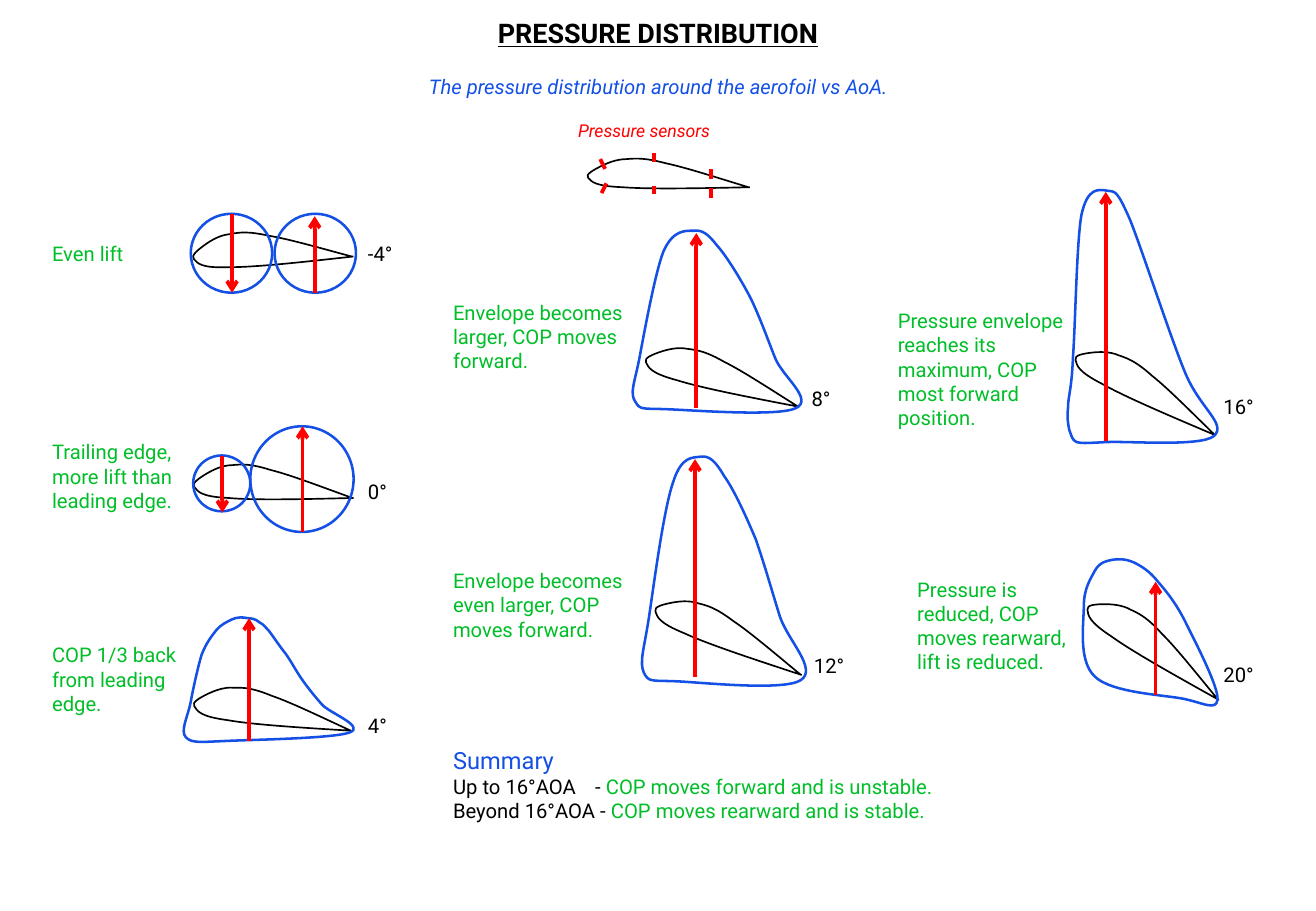
from pptx import Presentation
from pptx import util as u
from pptx.dml.color import RGBColor
from pptx.enum import shapes as kinds, text
from pptx.oxml import ns, xmlchemy as xml

BLACK = RGBColor(0x00, 0x00, 0x00)
BLUE = RGBColor(0x14, 0x50, 0xE6)
GREEN = RGBColor(0x00, 0xBE, 0x28)
RED = RGBColor(0xFF, 0x00, 0x00)

FOIL = [
    (1.32, 0.27),
    (0.92, 0.28), (0.51, 0.29), (0.29, 0.27), (0.07, 0.26), (0.04, 0.22), (0.01, 0.18),
    (-0.02, 0.15), (0.06, 0.1), (0.11, 0.07), (0.16, 0.04), (0.24, 0), (0.32, 0),
    (0.41, -0.01), (0.48, -0.01), (0.64, 0.04), (0.8, 0.08), (1.06, 0.18), (1.31, 0.27),
]
HULL4 = [
    (2.88, 6.03),
    (2.75, 6.08), (2.09, 6.09), (1.87, 6.1), (1.64, 6.11), (1.58, 6.12), (1.53, 6.07),
    (1.48, 6.02), (1.55, 5.89), (1.57, 5.78), (1.59, 5.67), (1.63, 5.49), (1.66, 5.39),
    (1.7, 5.29), (1.74, 5.24), (1.78, 5.19), (1.82, 5.14), (1.87, 5.12), (1.91, 5.1),
    (1.95, 5.08), (2, 5.08), (2.04, 5.09), (2.07, 5.09), (2.11, 5.1), (2.13, 5.12),
    (2.16, 5.13), (2.17, 5.15), (2.21, 5.19), (2.25, 5.24), (2.3, 5.32), (2.35, 5.38),
    (2.4, 5.45), (2.44, 5.53), (2.49, 5.6), (2.54, 5.67), (2.58, 5.72), (2.65, 5.8),
    (2.71, 5.87), (3.01, 5.98), (2.88, 6.03),
]
HULL8 = [
    (6.55, 3.36),
    (6.41, 3.43), (5.73, 3.38), (5.51, 3.37), (5.29, 3.36), (5.27, 3.38), (5.23, 3.31),
    (5.18, 3.24), (5.22, 3.16), (5.26, 2.96), (5.3, 2.75), (5.39, 2.25), (5.46, 2.07),
    (5.54, 1.89), (5.64, 1.9), (5.71, 1.9), (5.78, 1.89), (5.83, 1.93), (5.9, 2.02),
    (5.98, 2.11), (6.09, 2.29), (6.17, 2.44), (6.25, 2.6), (6.32, 2.8), (6.38, 2.95),
    (6.44, 3.1), (6.7, 3.29), (6.55, 3.36),
]
HULL12 = [
    (6.59, 5.6),
    (6.45, 5.69), (5.79, 5.62), (5.58, 5.61), (5.36, 5.6), (5.34, 5.62), (5.3, 5.54),
    (5.26, 5.45), (5.3, 5.35), (5.34, 5.09), (5.38, 4.83), (5.46, 4.2), (5.54, 3.97),
    (5.61, 3.75), (5.7, 3.77), (5.77, 3.76), (5.84, 3.75), (5.89, 3.8), (5.96, 3.92),
    (6.04, 4.03), (6.14, 4.25), (6.22, 4.44), (6.29, 4.64), (6.36, 4.89), (6.42, 5.08),
    (6.49, 5.28), (6.73, 5.51), (6.59, 5.6),
]
HULL16 = [
    (9.99, 3.59),
    (9.88, 3.68), (9.28, 3.63), (9.1, 3.64), (8.91, 3.65), (8.91, 3.65), (8.86, 3.64),
    (8.82, 3.62), (8.82, 3.59), (8.8, 3.54), (8.79, 3.49), (8.78, 3.45), (8.79, 3.35),
    (8.79, 3.26), (8.82, 3.21), (8.83, 2.94), (8.85, 2.68), (8.86, 1.99), (8.9, 1.77),
    (8.95, 1.54), (9.04, 1.56), (9.11, 1.57), (9.18, 1.58), (9.19, 1.56), (9.3, 1.81),
    (9.4, 2.06), (9.63, 2.77), (9.75, 3.06), (9.87, 3.36), (10.1, 3.49), (9.99, 3.59),
]
HULL20 = [
    (10.02, 5.76),
    (10.01, 5.86), (9.89, 5.78), (9.72, 5.75), (9.55, 5.72), (9.14, 5.7), (9.01, 5.57),
    (8.87, 5.44), (8.92, 5.13), (8.92, 4.99), (8.92, 4.84), (8.98, 4.76), (9.01, 4.7),
    (9.05, 4.63), (9.1, 4.62), (9.15, 4.61), (9.2, 4.6), (9.26, 4.6), (9.33, 4.63),
    (9.39, 4.66), (9.46, 4.7), (9.53, 4.79), (9.6, 4.87), (9.69, 4.98), (9.77, 5.15),
    (9.85, 5.31), (10.03, 5.66), (10.02, 5.76),
]


def curve(pool, dots, color, width, close=False):
    dots = [(u.Inches(x), u.Inches(y)) for x, y in dots]
    pen = pool.build_freeform(*dots[0])
    pen.add_line_segments(dots[1:], close=close)
    shape = pen.convert_to_shape()
    trace = shape.element.find(".//" + ns.qn("a:path"))
    legs = trace.findall(ns.qn("a:lnTo"))
    for i in range(0, len(dots) - 1, 3):
        bend = xml.OxmlElement("a:cubicBezTo")
        legs[i].addprevious(bend)
        for leg in legs[i:i + 3]:
            bend.append(leg[0])
            trace.remove(leg)
    shape.fill.background()
    shape.shadow.inherit = False
    shape.line.color.rgb = color
    shape.line.width = u.Pt(width)
    return shape


def stroke(pool, ends, arrow=False):
    line = pool.add_connector(kinds.MSO_CONNECTOR.STRAIGHT, *map(u.Inches, ends))
    line.line.color.rgb = RED
    line.line.width = u.Pt(2.25)
    if arrow:
        tip = xml.OxmlElement("a:tailEnd")
        tip.set("type", "arrow")
        line.line._get_or_add_ln().append(tip)
    line.element.spPr.append(xml.OxmlElement("a:effectLst"))


deck = Presentation()
deck.slide_width, deck.slide_height = u.Inches(10.83), u.Inches(7.5)
slide = deck.slides.add_slide(deck.slide_layouts[5])
pool = slide.shapes

curve(pool, [(4.83 + x * 1.34 / 1.32, 1.31 + y * 0.24 / 0.28) for x, y in FOIL], BLACK, 1)
for ends in [
    (4.99, 1.51, 4.95, 1.59), (4.94, 1.31, 4.98, 1.39),
    (5.38, 1.26, 5.38, 1.33), (5.38, 1.53, 5.38, 1.6),
    (5.85, 1.55, 5.85, 1.63), (5.85, 1.39, 5.85, 1.47),
]:
    stroke(pool, ends)

cases = [
    (1.58, 1.9, -4.9, [], [(1.57, 1.76, 0.67, 0.65), (2.26, 1.76, 0.67, 0.65)],
     [(1.91, 1.76, 2.41), (2.59, 2.41, 1.78)]),
    (1.59, 3.83, 0, [], [(1.59, 3.75, 0.47, 0.46), (2.06, 3.51, 0.85, 0.87)],
     [(1.83, 3.75, 4.22), (2.49, 4.38, 3.51)]),
    (1.59, 5.69, 4.9, HULL4, [], [(2.05, 6.1, 5.09)]),
    (5.3, 2.94, 12.3, HULL8, [], [(5.73, 3.36, 1.92)]),
    (5.36, 5.07, 19.6, HULL12, [], [(5.72, 5.57, 3.78)]),
    (8.8, 3.05, 24.4, HULL16, [], [(9.1, 3.63, 1.58)]),
    (8.87, 5.17, 30.6, HULL20, [], [(9.51, 5.72, 4.79)]),
]
for left, top, turn, hull, rings, lifts in cases:
    group = pool.add_group_shape().shapes
    foil = curve(group, [(left + x, top + y) for x, y in FOIL], BLACK, 1)
    foil.rotation = turn
    if hull:
        curve(group, hull, BLUE, 1.5, True)
    for box in rings:
        ring = group.add_shape(kinds.MSO_SHAPE.OVAL, *map(u.Inches, box))
        ring.fill.background()
        ring.shadow.inherit = False
        ring.line.color.rgb = BLUE
        ring.line.width = u.Pt(1.5)
    for x, start, end in lifts:
        stroke(group, (x, start, x, end), True)

note = {"size": u.Pt(12), "color": GREEN}
mark = {"size": u.Pt(12), "color": BLACK}
lead = {"size": u.Pt(12), "color": BLUE, "italic": True}
label = {"size": u.Pt(10.5), "color": RED, "italic": True}
head = {"size": u.Pt(16), "color": BLACK, "bold": True, "underline": True}
topic = {"size": u.Pt(14), "color": BLUE}
LEFT, MID = text.PP_ALIGN.LEFT, text.PP_ALIGN.CENTER

texts = [
    ((0, 0.09, 10.83, 0.37), MID, [[("PRESSURE DISTRIBUTION", head)]]),
    ((1.85, 0.56, 7.14, 0.3), MID,
     [[("The pressure distribution around the aerofoil vs AoA.", lead)]]),
    ((4.66, 0.94, 1.67, 0.29), LEFT, [[("Pressure sensors", label)]]),
    ((3.63, 6.09, 5.51, 0.74), LEFT, [
        [("Summary", topic)],
        [("Up to 16°AOA\t- ", mark), ("COP moves forward and is unstable.", note)],
        [("Beyond 16°AOA - ", mark), ("COP moves rearward and is stable.", note)],
    ]),
]
for box, words in [
    ((0.33, 1.94, 1.1, 0.3), "Even lift"),
    ((0.33, 3.57, 1.41, 0.71), "Trailing edge, more lift than leading edge."),
    ((0.33, 5.24, 1.41, 0.71), "COP 1/3 back from leading edge."),
    ((3.63, 2.42, 1.73, 0.71), "Envelope becomes larger, COP moves forward."),
    ((3.63, 4.63, 1.73, 0.71), "Envelope becomes even larger, COP moves forward."),
    ((7.29, 2.49, 1.59, 1.11),
     "Pressure envelope reaches its maximum, COP most forward position."),
    ((7.45, 4.7, 1.57, 0.91), "Pressure is reduced, COP moves rearward, lift is reduced."),
]:
    texts.append((box, LEFT, [[(words, note)]]))
for left, top, angle in [
    (2.93, 1.94, -4), (2.93, 3.9, 0), (2.93, 5.82, 4), (6.58, 3.13, 8),
    (6.6, 5.33, 12), (9.97, 3.2, 16), (9.97, 5.4, 20),
]:
    texts.append(((left, top, 0.69, 0.3), LEFT, [[(f"{angle}°", mark)]]))

for box, align, rows in texts:
    area = [u.Inches(n) for n in box]
    shape = pool.title if rows[0][0][1] is head else pool.add_textbox(*area)
    shape.left, shape.top, shape.width, shape.height = area
    frame = shape.text_frame
    frame.word_wrap = True
    frame.auto_size = text.MSO_AUTO_SIZE.SHAPE_TO_FIT_TEXT
    frame.vertical_anchor = text.MSO_ANCHOR.TOP
    for i, row in enumerate(rows):
        para = frame.add_paragraph() if i else frame.paragraphs[0]
        para.alignment = align
        for words, style in row:
            run = para.add_run()
            run.text = words
            run.font.name = "Roboto"
            for key, value in style.items():
                if key == "color":
                    run.font.color.rgb = value
                else:
                    setattr(run.font, key, value)
            if "\t" in words:
                tabs = xml.OxmlElement("a:tabLst")
                stop = xml.OxmlElement("a:tab")
                stop.set("pos", str(u.Inches(1.17)))
                stop.set("algn", "l")
                tabs.append(stop)
                para._p.get_or_add_pPr().append(tabs)

deck.save("out.pptx")
